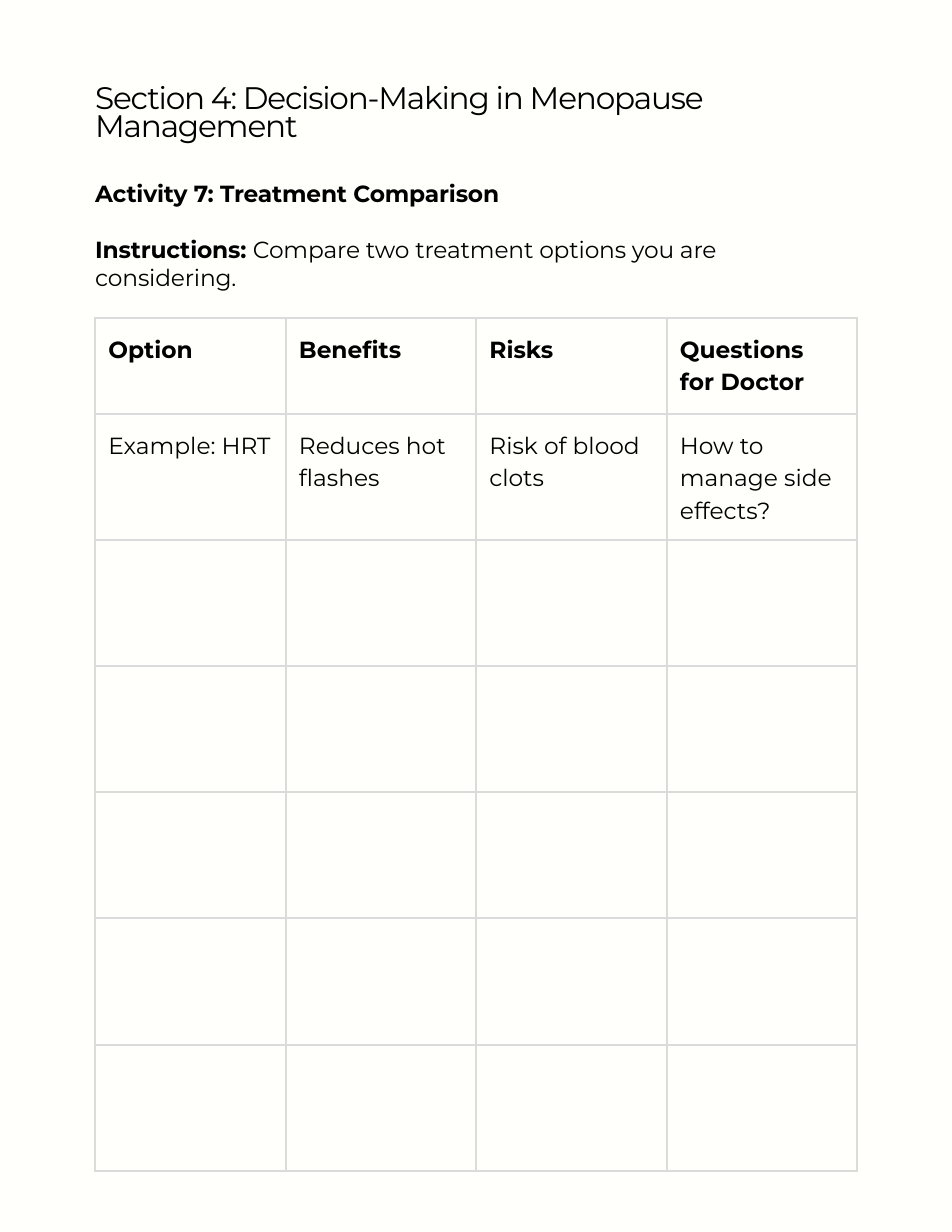
import pptx
import pptx.util
import pptx.dml.color
import pptx.oxml
import pptx.oxml.ns
from pptx.util import Cm, Pt

# Content
TITLE = [[("Section 4: Decision-Making in Menopause Management", False)]]
INTRO = [
    [("Activity 7: Treatment Comparison", True)],
    [("Instructions: ", True),
     ("Compare two treatment options you are considering.", False)],
]
HEAD = ["Option", "Benefits", "Risks", "Questions for Doctor"]
SAMPLE = ["Example: HRT", "Reduces hot flashes", "Risk of blood clots",
          "How to manage side effects?"]
BLANKS = 5

# Style and layout, in cm
COLORS = {"page": "FFFFFC", "ink": "000000", "grid": "DBDBDB"}
FONT = "Montserrat"
LEFT, WIDTH = 2.16, 17.28
HEAD_H, ROW_H, PAD = 2.18, 2.86, 0.3


def color(name):
    return pptx.dml.color.RGBColor.from_string(COLORS[name])


def style(para, size, lead):
    para.font.name = FONT
    para.font.size = Pt(size)
    para.font.color.rgb = color("ink")
    para.line_spacing = Pt(lead)


def add_text(slide, top, height, paras, size, track):
    box = slide.shapes.add_textbox(Cm(LEFT), Cm(top), Cm(WIDTH), Cm(height))
    frame = box.text_frame
    frame.word_wrap = True
    frame.margin_left = frame.margin_right = 0
    frame.margin_top = frame.margin_bottom = 0
    for i, runs in enumerate(paras):
        para = frame.add_paragraph() if i else frame.paragraphs[0]
        style(para, size, 18)
        if i:
            para.space_before = Pt(18)
        for text, bold in runs:
            run = para.add_run()
            run.text = text
            run.font.bold = bold
            run.font._element.set("spc", str(track))


def add_border(cell):
    props = cell._tc.get_or_add_tcPr()
    for i, side in enumerate("LRTB"):
        props.insert(i, pptx.oxml.parse_xml(
            f'<a:ln{side} {pptx.oxml.ns.nsdecls("a")} w="{Pt(1.5)}">'
            f'<a:solidFill><a:srgbClr val="{COLORS["grid"]}"/></a:solidFill>'
            f'</a:ln{side}>'))


def add_grid(slide, top):
    rows = [HEAD, SAMPLE] + [[""] * len(HEAD)] * BLANKS
    tall = HEAD_H + ROW_H * (len(rows) - 1)
    table = slide.shapes.add_table(len(rows), len(HEAD), Cm(LEFT), Cm(top),
                                   Cm(WIDTH), Cm(tall)).table
    table.horz_banding = False
    for col in table.columns:
        col.width = Cm(WIDTH / len(HEAD))
    for r, texts in enumerate(rows):
        table.rows[r].height = Cm(ROW_H if r else HEAD_H)
        for c, text in enumerate(texts):
            cell = table.cell(r, c)
            cell.fill.background()
            add_border(cell)
            cell.margin_left = cell.margin_right = Cm(PAD)
            cell.margin_top = cell.margin_bottom = Cm(PAD)
            cell.text = text
            para = cell.text_frame.paragraphs[0]
            style(para, 15, 21)
            para.font.bold = r == 0


def main():
    deck = pptx.Presentation()
    deck.slide_width, deck.slide_height = Cm(21.59), Cm(27.94)
    slide = deck.slides.add_slide(deck.slide_layouts[6])
    slide.background.fill.solid()
    slide.background.fill.fore_color.rgb = color("page")

    # Headings, then the comparison table
    add_text(slide, 2, 1.3, TITLE, 20, -80)
    add_text(slide, 4.06, 2.36, INTRO, 15, -10)
    add_grid(slide, 7.21)
    deck.save("out.pptx")


if __name__ == "__main__":
    main()
